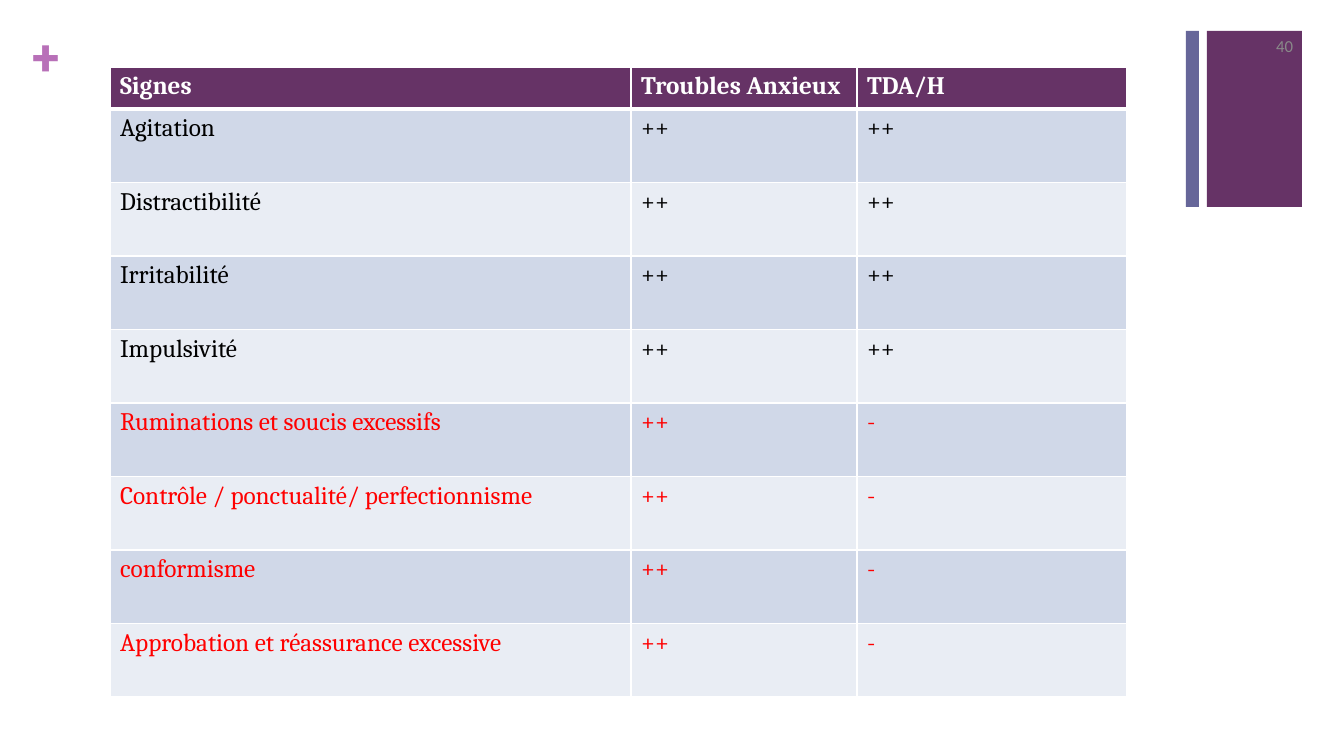
from lxml.etree import SubElement
from pptx import Presentation
from pptx.dml.color import RGBColor
from pptx.enum.shapes import MSO_SHAPE
from pptx.enum.text import MSO_ANCHOR, PP_ALIGN
from pptx.oxml.ns import qn
from pptx.util import Pt

HEADER = ("Signes", "Troubles Anxieux", "TDA/H")
SHARED_SIGNS = ("Agitation", "Distractibilité", "Irritabilité", "Impulsivité")
ANXIETY_SIGNS = (
    "Ruminations et soucis excessifs",
    "Contrôle / ponctualité/ perfectionnisme",
    "conformisme",
    "Approbation et réassurance excessive",
)
PAGE_NUMBER = "40"

COLORS = {
    "plum": "663366", "slate": "666699", "orchid": "B870B8", "grey": "898989",
    "band_dark": "D0D8E8", "band_light": "E9EDF4",
    "white": "FFFFFF", "black": "000000", "red": "FF0000",
}

EMU_PER_PX = 914400 / 100.8
SLIDE_SIZE = (1344, 756)
BARS = (("plum", (1207, 31, 95, 176)), ("slate", (1186, 31, 13, 176)))
PLUS_BOX = (33, 25, 38, 61)
NUMBER_BOX = (1221, 26, 82, 40)
TABLE_BOX = (110, 67, 1017, 630)
COLUMN_WIDTHS = (521, 226, 270)
HEADER_HEIGHT = 42


def px(value):
    return round(value * EMU_PER_PX)


def emu_box(box):
    return [px(v) for v in box]


def rgb(name):
    return RGBColor.from_string(COLORS[name])


def add_run(p, text, size, font, color, bold=False):
    r = p.add_run()
    r.text = text
    r.font.size = Pt(size)
    r.font.name = font
    r.font.bold = bold
    r.font.color.rgb = rgb(color)


def add_bar(slide, color, box):
    sp = slide.shapes.add_shape(MSO_SHAPE.RECTANGLE, *emu_box(box))
    sp.shadow.inherit = False
    sp.fill.solid()
    sp.fill.fore_color.rgb = rgb(color)
    sp.line.fill.background()


def add_text(slide, box):
    tf = slide.shapes.add_textbox(*emu_box(box)).text_frame
    tf.word_wrap = True
    return tf


def set_borders(cell, **widths):
    """Draw white cell borders; widths are points keyed by L, R, T and B."""
    tc_pr = cell._tc.get_or_add_tcPr()
    for i, (side, width) in enumerate(widths.items()):
        ln = SubElement(tc_pr, qn(f"a:ln{side}"), w=str(Pt(width)))
        fill = SubElement(ln, qn("a:solidFill"))
        SubElement(fill, qn("a:srgbClr"), val=COLORS["white"])
        tc_pr.insert(i, ln)


def add_signs_table(slide):
    rows = [(HEADER, "white")]
    rows += [((sign, "++", "++"), "black") for sign in SHARED_SIGNS]
    rows += [((sign, "++", "-"), "red") for sign in ANXIETY_SIGNS]
    body_height = (TABLE_BOX[3] - HEADER_HEIGHT) / (len(rows) - 1)

    table = slide.shapes.add_table(len(rows), len(HEADER), *emu_box(TABLE_BOX)).table
    for column, width in zip(table.columns, COLUMN_WIDTHS):
        column.width = px(width)
    for i, (texts, color) in enumerate(rows):
        is_header = i == 0
        table.rows[i].height = px(HEADER_HEIGHT if is_header else body_height)
        band = "plum" if is_header else ("band_light", "band_dark")[i % 2]
        for j, text in enumerate(texts):
            cell = table.cell(i, j)
            cell.fill.solid()
            cell.fill.fore_color.rgb = rgb(band)
            set_borders(cell, L=1, R=1, T=3 if i == 1 else 1, B=3 if is_header else 1)
            add_run(cell.text_frame.paragraphs[0], text, 18, "Cambria", color, is_header)


def main():
    prs = Presentation()
    prs.slide_width, prs.slide_height = emu_box(SLIDE_SIZE)
    slide = prs.slides.add_slide(prs.slide_layouts[6])

    for color, box in BARS:
        add_bar(slide, color, box)

    tf = add_text(slide, PLUS_BOX)
    tf.margin_left = tf.margin_right = tf.margin_top = tf.margin_bottom = 0
    add_run(tf.paragraphs[0], "+", 36, "Roboto Slab", "orchid", True)

    tf = add_text(slide, NUMBER_BOX)
    tf.vertical_anchor = MSO_ANCHOR.MIDDLE
    tf.paragraphs[0].alignment = PP_ALIGN.RIGHT
    add_run(tf.paragraphs[0], PAGE_NUMBER, 12, "Calibri", "grey")

    add_signs_table(slide)
    prs.save("out.pptx")


if __name__ == "__main__":
    main()
